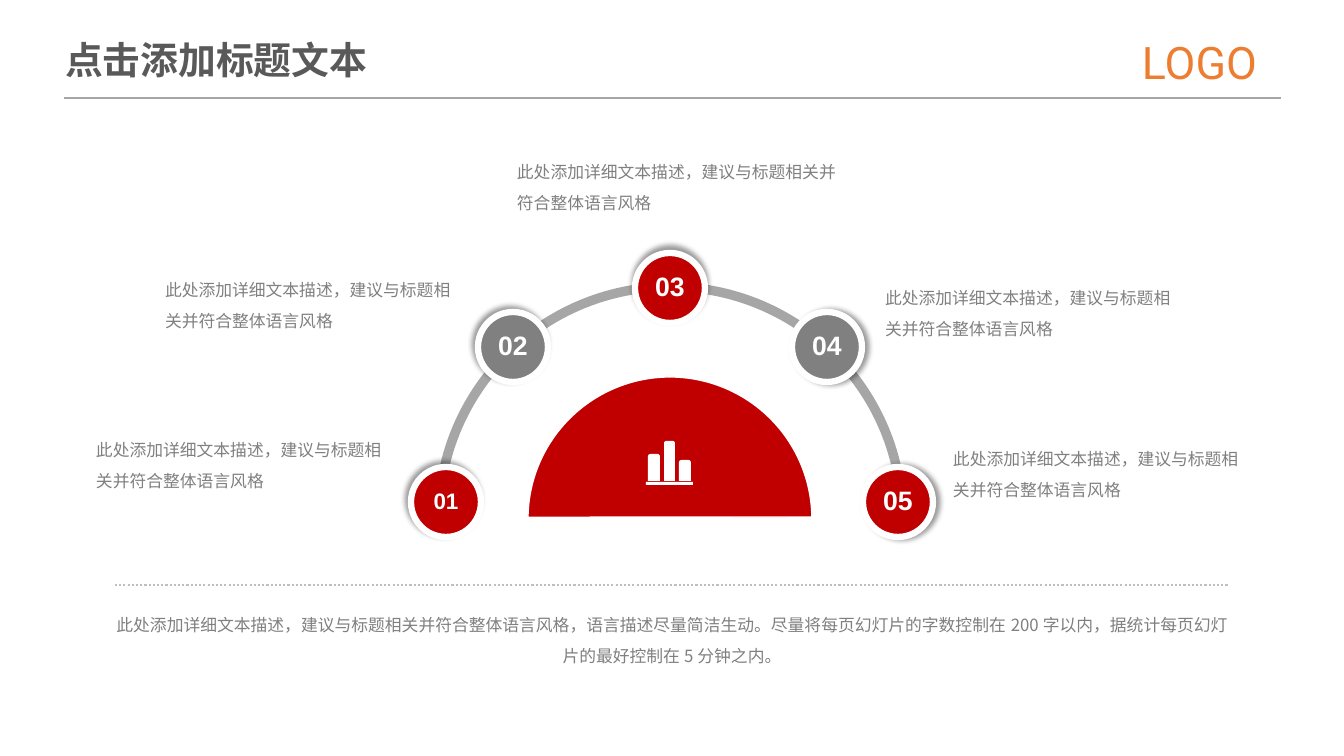
from lxml import etree
from pptx import Presentation
from pptx.dml.color import RGBColor
from pptx.enum.dml import MSO_LINE
from pptx.enum.shapes import MSO_CONNECTOR, MSO_SHAPE
from pptx.enum.text import MSO_ANCHOR, MSO_AUTO_SIZE, PP_ALIGN
from pptx.oxml.ns import qn
from pptx.util import Emu, Pt

STRAIGHT = MSO_CONNECTOR.STRAIGHT
OVAL, RECT, ROUND_TOP = MSO_SHAPE.OVAL, MSO_SHAPE.RECTANGLE, MSO_SHAPE.ROUND_2_SAME_RECTANGLE
ARC, CHORD = MSO_SHAPE.BLOCK_ARC, MSO_SHAPE.CHORD
LEFT, CENTER = PP_ALIGN.LEFT, PP_ALIGN.CENTER
MIDDLE, GROW = MSO_ANCHOR.MIDDLE, MSO_AUTO_SIZE.SHAPE_TO_FIT_TEXT
DOTTED = MSO_LINE.ROUND_DOT

SLIDE_W, SLIDE_H = 1344, 756
EMU_PER_PX = 12192000 / SLIDE_W
CJK, NUMBER_FONT, LOGO_FONT = "Noto Sans CJK SC", "Arial", "Roboto"
RED, GRAY, ARC_GRAY, WHITE = "C00000", "808080", "A6A6A6", "FFFFFF"

TITLE = "点击添加标题文本"
LOGO = "LOGO"
DESCRIPTION = "此处添加详细文本描述，建议与标题相关并符合整体语言风格"
SUMMARY = ("此处添加详细文本描述，建议与标题相关并符合整体语言风格，语言描述尽量简洁生动。"
           "尽量将每页幻灯片的字数控制在200字以内，据统计每页幻灯片的最好控制在5分钟之内。")

# label, center x, center y, fill, text size, shadow direction in degrees
BADGES = [
    ("03", 670, 288, RED, 19, 270),
    ("04", 827, 347, GRAY, 19, 0),
    ("05", 898, 502, RED, 19, 0),
    ("01", 446, 502, RED, 16, 225),
    ("02", 513, 347, GRAY, 19, 225),
]
BADGE_SIZE = 70
# left, top, width of each description
DESCRIPTIONS = [(165, 270, 286), (96, 430, 286), (885, 278, 286), (953, 439, 286), (517, 152, 324)]
DESCRIPTION_H = 117
ARC_BOX = (434, 282, 473, 473)
# start angle, end angle (degrees), thickness ratio
ARCS = [(180, 270, 0.02), (270, 359.82, 0.02)]
DOME_BOX, DOME_ANGLES = (528, 377, 284, 284), (180.68, 359.2)
DOME_PATCH = (615, 399, 20, 110)
# left, top, width of each icon bar
ICON_BARS = [(648, 454, 12), (664, 441, 11), (679, 460, 12)]
ICON_BOTTOM = 481
ICON_BASE = (646, 482, 47, 3)


def px(value):
    return Emu(round(value * EMU_PER_PX))


def color(hex_text):
    return RGBColor.from_string(hex_text)


def angle(degrees):
    """Preset angles are 60000ths of a degree; adjustments are divided by 100000."""
    return degrees * 0.6


def add_filled(shapes, kind, box, fill, outline=None, weight=1, adjust=()):
    shape = shapes.add_shape(kind, *map(px, box))
    shape.shadow.inherit = False
    shape.fill.solid()
    shape.fill.fore_color.rgb = color(fill)
    if outline:
        shape.line.color.rgb = color(outline)
        shape.line.width = Pt(weight)
    else:
        shape.line.fill.background()
    for index, value in enumerate(adjust):
        shape.adjustments[index] = value
    return shape


def add_shadow(shape, direction):
    effects = shape._element.spPr.find(qn("a:effectLst"))
    outer = etree.SubElement(effects, qn("a:outerShdw"), blurRad=str(Pt(4)), dist=str(Pt(3)),
                             dir=str(direction * 60000), algn="ctr", rotWithShape="0")
    black = etree.SubElement(outer, qn("a:srgbClr"), val="000000")
    etree.SubElement(black, qn("a:alpha"), val="40000")


def write(shape, text, size, font, hex_text, bold=False, align=LEFT, spacing=1.0,
          inset=(0, 0), wrap=True):
    frame = shape.text_frame
    frame.word_wrap = wrap
    frame.margin_left = frame.margin_right = px(inset[0])
    frame.margin_top = frame.margin_bottom = px(inset[1])
    para = frame.paragraphs[0]
    para.alignment, para.line_spacing = align, spacing
    span = para.add_run()
    span.text = text
    span.font.size, span.font.bold, span.font.name = Pt(size), bold, font
    span.font.color.rgb = color(hex_text)
    etree.SubElement(span._r.get_or_add_rPr(), qn("a:ea"), typeface=font)


def add_text(page, box, text, size, font, hex_text, **style):
    text_box = page.shapes.add_textbox(*map(px, box))
    write(text_box, text, size, font, hex_text, **style)
    return text_box


def add_rule(page, left, right, y, hex_text, weight):
    rule = page.shapes.add_connector(STRAIGHT, px(left), px(y), px(right), px(y))
    rule.line.color.rgb = color(hex_text)
    rule.line.width = Pt(weight)
    etree.SubElement(rule._element.spPr, qn("a:effectLst"))
    return rule


def add_header(page):
    title = add_text(page, (52, 30, 333, 59), TITLE, 27, CJK, "595959",
                     bold=True, inset=(13, 7), wrap=False)
    logo = add_text(page, (1129, 28, 167, 68), LOGO, 32, LOGO_FONT, "ED7D31", inset=(13, 7))
    for text_box in (title, logo):
        text_box.text_frame.auto_size = GROW
    add_rule(page, 64, 1281, 98, ARC_GRAY, 1)


def add_diagram(page):
    arcs = page.shapes.add_group_shape().shapes
    for start, end, thickness in ARCS:
        add_filled(arcs, ARC, ARC_BOX, ARC_GRAY, adjust=(angle(start), angle(end), thickness))
    for label, x, y, fill, size, direction in BADGES:
        box = (x - BADGE_SIZE / 2, y - BADGE_SIZE / 2, BADGE_SIZE, BADGE_SIZE)
        badge = add_filled(page.shapes, OVAL, box, fill, WHITE, 4.5)
        add_shadow(badge, direction)
        write(badge, label, size, NUMBER_FONT, WHITE, bold=True, align=CENTER, spacing=0.9)
        badge.text_frame.vertical_anchor = MIDDLE
    dome = page.shapes.add_group_shape().shapes
    add_filled(dome, CHORD, DOME_BOX, RED, WHITE, adjust=map(angle, DOME_ANGLES))
    add_filled(dome, RECT, DOME_PATCH, RED)


def add_icon(page):
    icon = page.shapes.add_group_shape().shapes
    for left, top, width in ICON_BARS:
        add_filled(icon, ROUND_TOP, (left, top, width, ICON_BOTTOM - top), WHITE, adjust=(0.2, 0))
    add_filled(icon, RECT, ICON_BASE, WHITE)


def main():
    deck = Presentation()
    deck.slide_width, deck.slide_height = px(SLIDE_W), px(SLIDE_H)
    page = deck.slides.add_slide(deck.slide_layouts[6])
    add_header(page)
    add_diagram(page)
    add_text(page, (114, 605, 1116, 99), SUMMARY, 12, CJK, GRAY, align=CENTER, spacing=1.5)
    add_rule(page, 115, 1229, 585, "BFBFBF", 1.5).line.dash_style = DOTTED
    for left, top, width in DESCRIPTIONS:
        add_text(page, (left, top, width, DESCRIPTION_H), DESCRIPTION, 12, CJK, GRAY, spacing=1.5)
    add_icon(page)
    deck.save("out.pptx")


if __name__ == "__main__":
    main()
